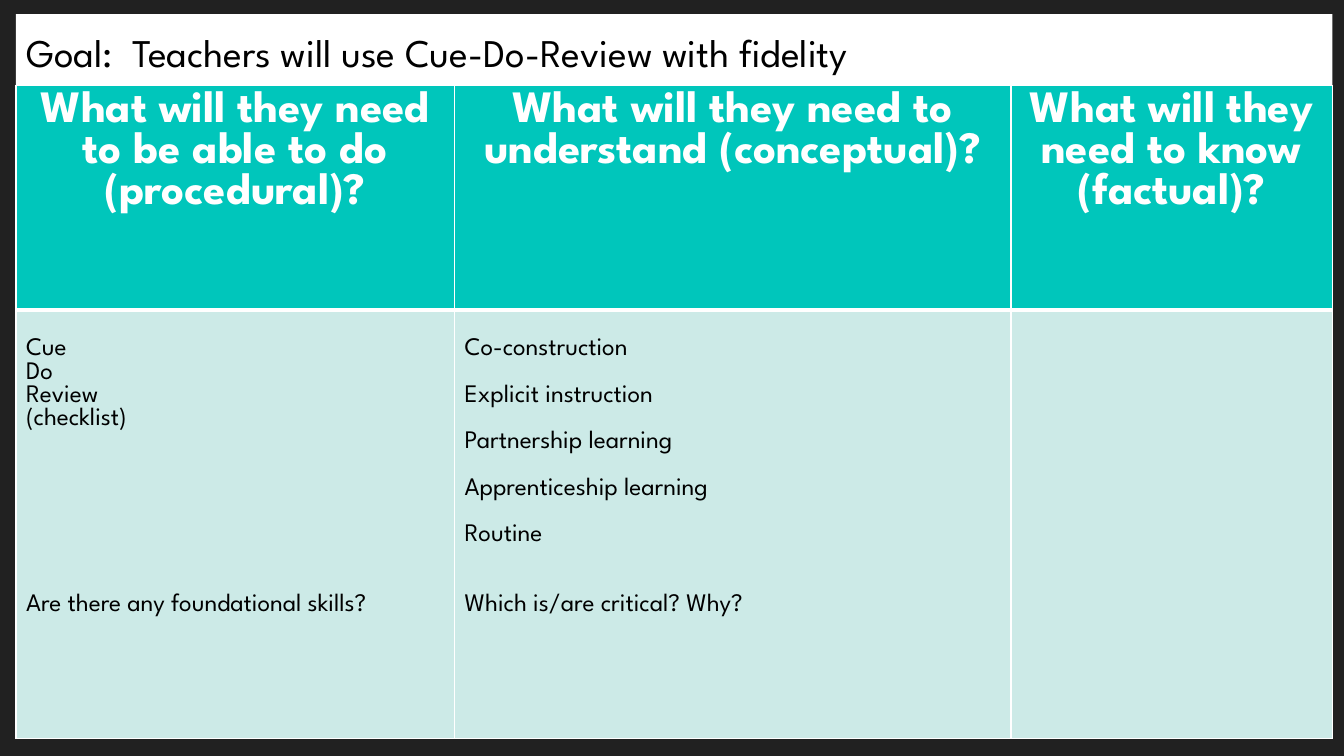
from lxml.etree import SubElement
from pptx import Presentation
from pptx.dml.color import RGBColor
from pptx.enum.text import MSO_ANCHOR, MSO_AUTO_SIZE, PP_ALIGN
from pptx.oxml.ns import qn
from pptx.util import Pt

COLORS = {"page": "212121", "white": "FFFFFF", "text": "000000",
          "header": "00C6BB", "body": "CCEAE7"}
FONT = "League Spartan"
TITLE = {"size": Pt(28), "bold": False, "name": FONT}
HEADER = {"size": Pt(32), "bold": True, "name": FONT}
BODY = {"size": Pt(18), "bold": False, "name": FONT}

LEFT, TOP = 11.4, 61.2
COLUMN_WIDTHS = (313.3, 397.5, 229.6)
ROW_HEIGHTS = (160.2, 306)
LINE = 16.6

GOAL = "Goal:  Teachers will use Cue-Do-Review with fidelity"
COLUMNS = (
    ("What will they need to be able to do (procedural)?",
     (("Cue", 0), ("Do", 0), ("Review", 0), ("(checklist)", 0),
      ("Are there any foundational skills?", 7))),
    ("What will they need to understand (conceptual)?",
     (("Co-construction", 0), ("Explicit instruction", 1),
      ("Partnership learning", 1), ("Apprenticeship learning", 1),
      ("Routine", 1), ("Which is/are critical? Why?", 2))),
    ("What will they need to know (factual)?", ()),
)


def paint(fill, color):
    """Give a fill one solid colour."""
    fill.solid()
    fill.fore_color.rgb = RGBColor.from_string(COLORS[color])


def set_attributes(target, values):
    """Set every attribute named in a dict of values."""
    for name, value in values.items():
        setattr(target, name, value)


def write(para, text, style, color, align=PP_ALIGN.LEFT):
    """Add one formatted run to a paragraph."""
    para.alignment = align
    span = para.add_run()
    span.text = text
    set_attributes(span.font, style)
    span.font.color.rgb = RGBColor.from_string(COLORS[color])


def add_borders(cell, bottom_width):
    """Draw white borders round a cell, with a chosen bottom width."""
    properties = cell._tc.get_or_add_tcPr()
    widths = {"a:lnL": 1, "a:lnR": 1, "a:lnT": 1, "a:lnB": bottom_width}
    for position, (tag, width) in enumerate(widths.items()):
        line = SubElement(properties, qn(tag), w=str(Pt(width)))
        properties.insert(position, line)
        solid = SubElement(line, qn("a:solidFill"))
        SubElement(solid, qn("a:srgbClr"), val=COLORS["white"])


def add_goal(page):
    """Place the goal in the title placeholder as a white band."""
    box = page.shapes.title
    set_attributes(box, {"left": Pt(LEFT), "top": Pt(10),
                         "width": Pt(sum(COLUMN_WIDTHS)), "height": Pt(63.4)})
    paint(box.fill, "white")
    set_attributes(box.text_frame, {
        "word_wrap": True, "auto_size": MSO_AUTO_SIZE.NONE,
        "vertical_anchor": MSO_ANCHOR.TOP, "margin_top": Pt(10.3),
        "margin_left": Pt(7.2)})
    write(box.text_frame.paragraphs[0], GOAL, TITLE, "text")


def fill_header(cell, heading):
    """Fill a heading cell."""
    paint(cell.fill, "header")
    add_borders(cell, 3)
    write(cell.text_frame.paragraphs[0], heading, HEADER, "white",
          PP_ALIGN.CENTER)


def fill_body(cell, items):
    """Fill a body cell, each item preceded by a gap counted in lines."""
    paint(cell.fill, "body")
    add_borders(cell, 1)
    cell.margin_top = Pt(3.6 + LINE)
    frame = cell.text_frame
    for index, (text, gap) in enumerate(items):
        para = frame.add_paragraph() if index else frame.paragraphs[0]
        para.space_before = Pt(gap * LINE)
        write(para, text, BODY, "text")


def add_planning_table(page):
    """Add the table of skills, concepts and facts."""
    table = page.shapes.add_table(
        len(ROW_HEIGHTS), len(COLUMNS), Pt(LEFT), Pt(TOP),
        Pt(sum(COLUMN_WIDTHS)), Pt(sum(ROW_HEIGHTS))).table
    for row, height in zip(table.rows, ROW_HEIGHTS):
        row.height = Pt(height)
    for index, (heading, items) in enumerate(COLUMNS):
        table.columns[index].width = Pt(COLUMN_WIDTHS[index])
        fill_header(table.cell(0, index), heading)
        fill_body(table.cell(1, index), items)


def main():
    """Build and save the deck."""
    deck = Presentation()
    set_attributes(deck, {"slide_width": Pt(960), "slide_height": Pt(540)})
    page = deck.slides.add_slide(deck.slide_layouts[5])
    paint(page.background.fill, "page")
    add_goal(page)
    add_planning_table(page)
    deck.save("out.pptx")


if __name__ == "__main__":
    main()
